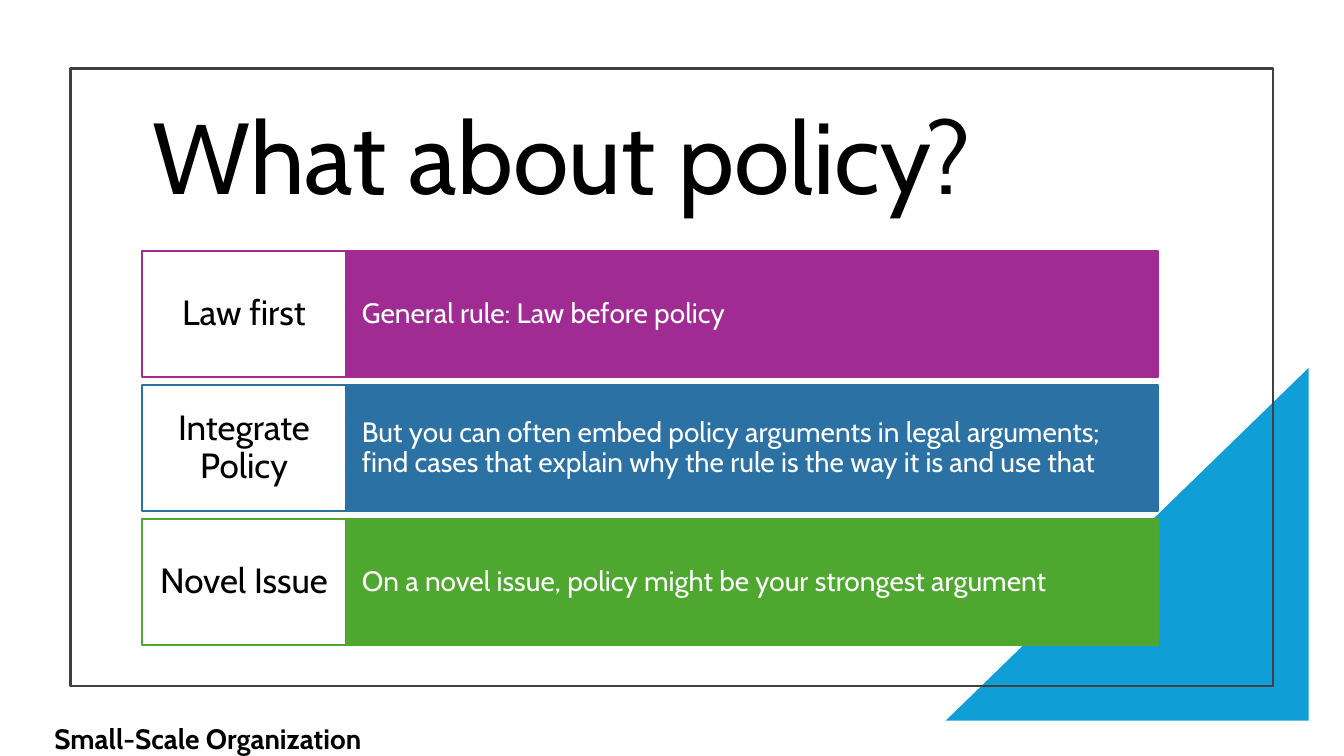
import dataclasses

import pptx
import pptx.dml.color
import pptx.enum.shapes
import pptx.enum.text
import pptx.util

PX = 9144
SHAPE = pptx.enum.shapes.MSO_SHAPE
ALIGN = pptx.enum.text.PP_ALIGN
ANCHOR = pptx.enum.text.MSO_ANCHOR


@dataclasses.dataclass(frozen=True)
class Theme:
    font: str = "Cabin"
    ink: str = "000000"
    paper: str = "FFFFFF"
    frame: str = "404040"
    corner: str = "0F9ED5"
    title_size: int = 72
    label_size: int = 25
    text_size: int = 20
    line_width: float = 1.5


THEME = Theme()
ROWS = [
    ("Law first", "General rule: Law before policy", "A02B93"),
    (
        "Integrate Policy",
        "But you can often embed policy arguments in legal arguments; "
        "find cases that explain why the rule is the way it is and use that",
        "2C71A4",
    ),
    ("Novel Issue", "On a novel issue, policy might be your strongest argument", "4EA72E"),
]
ROW_LEFT, ROW_TOP, ROW_HEIGHT, ROW_STEP = 141, 249, 125, 133
LABEL_WIDTH, TEXT_WIDTH = 202, 806


def px(length):
    return pptx.util.Emu(length * PX)


def color(value):
    return pptx.dml.color.RGBColor.from_string(value)


def apply(target, values):
    for name, value in values.items():
        setattr(target, name, value)


def write(shape, text, size, ink=THEME.ink, bold=False, align=ALIGN.LEFT,
          anchor=ANCHOR.MIDDLE, spacing=0.9, inset=(10, 5)):
    frame = shape.text_frame
    across, down = map(px, inset)
    apply(frame, {
        "word_wrap": True,
        "auto_size": pptx.enum.text.MSO_AUTO_SIZE.NONE,
        "vertical_anchor": anchor,
        "margin_left": across,
        "margin_right": across,
        "margin_top": down,
        "margin_bottom": down,
    })
    para = frame.paragraphs[0]
    apply(para, {"alignment": align, "line_spacing": spacing})
    span = para.add_run()
    apply(span, {"text": text})
    apply(span.font, {"name": THEME.font, "size": pptx.util.Pt(size), "bold": bold})
    span.font.color.rgb = color(ink)


def add_box(page, kind, place, fill=None, line=None):
    box = page.shapes.add_shape(kind, *map(px, place))
    box.shadow.inherit = False
    if fill:
        box.fill.solid()
        box.fill.fore_color.rgb = color(fill)
    else:
        box.fill.background()
    if line:
        box.line.color.rgb = color(line)
        box.line.width = pptx.util.Pt(THEME.line_width)
    else:
        box.line.fill.background()
    return box


def add_title(page, text, place):
    title = page.shapes.title
    apply(title, dict(zip(("left", "top", "width", "height"), map(px, place))))
    write(title, text, THEME.title_size)
    tree = page.shapes._spTree
    tree.remove(title._element)
    tree.append(title._element)


def add_row(page, top, label, text, tone):
    text_left = ROW_LEFT + LABEL_WIDTH
    bar = add_box(page, SHAPE.RECTANGLE, (text_left, top, TEXT_WIDTH, ROW_HEIGHT), tone, tone)
    write(bar, text, THEME.text_size, THEME.paper, inset=(16, 32))
    tag = add_box(page, SHAPE.RECTANGLE, (ROW_LEFT, top, LABEL_WIDTH, ROW_HEIGHT),
                  THEME.paper, tone)
    write(tag, label, THEME.label_size, align=ALIGN.CENTER, inset=(11, 12))


def add_footer(page, text, place):
    box = page.shapes.add_textbox(*map(px, place))
    write(box, text, THEME.text_size, bold=True, anchor=ANCHOR.TOP, spacing=1.0)


def main():
    deck = pptx.Presentation()
    apply(deck, {"slide_width": px(1333), "slide_height": px(750)})
    page = deck.slides.add_slide(deck.slide_layouts[5])
    page.background.fill.solid()
    page.background.fill.fore_color.rgb = color(THEME.paper)
    corner = add_box(page, SHAPE.RIGHT_TRIANGLE, (938, 365, 360, 350), THEME.corner)
    corner._element.spPr.xfrm.set("flipH", "1")
    add_box(page, SHAPE.RECTANGLE, (70, 68, 1193, 613), line=THEME.frame)
    add_title(page, "What about policy?", (141, 72, 883, 177))
    for index, row in enumerate(ROWS):
        add_row(page, ROW_TOP + index * ROW_STEP, *row)
    add_footer(page, "Small-Scale Organization", (44, 711, 819, 44))
    deck.save("out.pptx")


if __name__ == "__main__":
    main()
